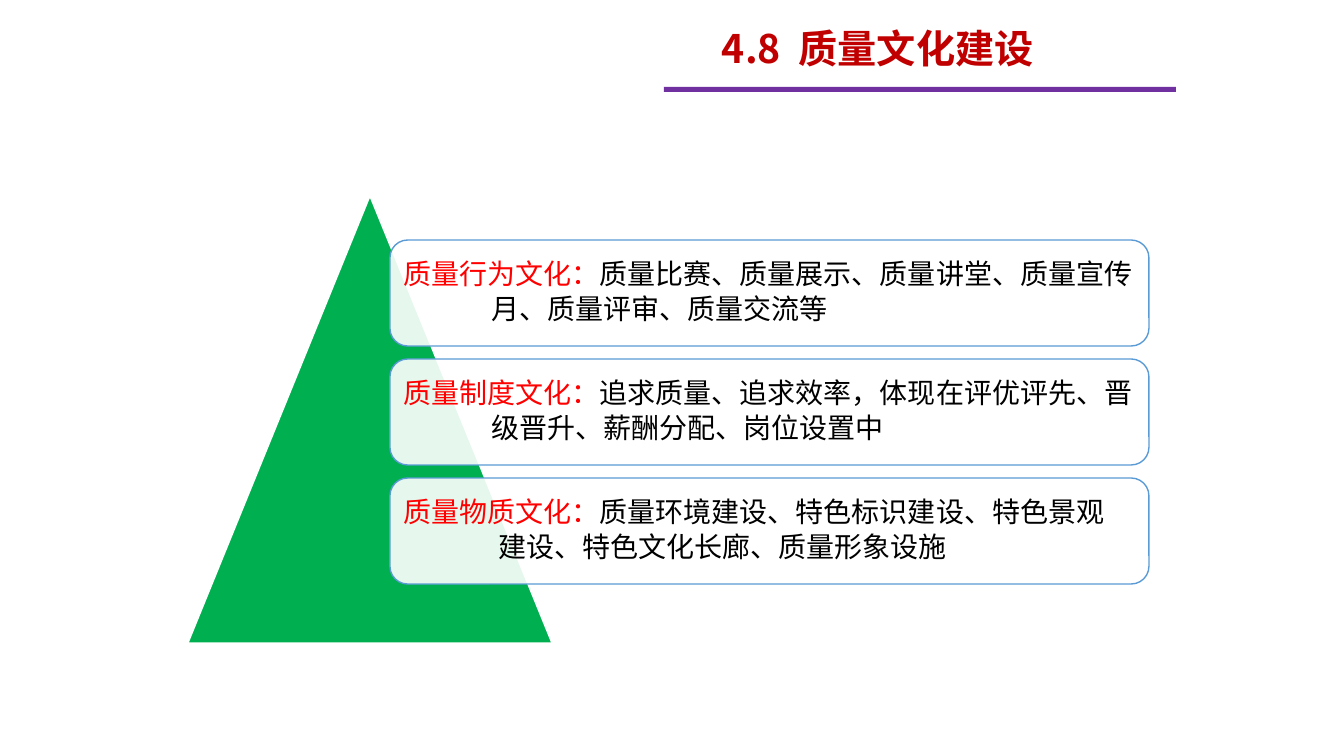
from pptx import Presentation
from pptx.dml.color import RGBColor
from pptx.enum.shapes import MSO_SHAPE as Kind
from pptx.enum.text import MSO_ANCHOR as Anchor, MSO_AUTO_SIZE as Fit, PP_ALIGN as Align
from pptx.oxml.ns import qn
from pptx.util import Pt
from lxml import etree

TITLE = "4.8  质量文化建设"
# heading, first line, second line, indent of the second line in px
CARDS = [
    ("质量行为文化：", "质量比赛、质量展示、质量讲堂、质量宣传",
     "月、质量评审、质量交流等", 88),
    ("质量制度文化：", "追求质量、追求效率，体现在评优评先、晋",
     "级晋升、薪酬分配、岗位设置中", 88),
    ("质量物质文化：", "质量环境建设、特色标识建设、特色景观",
     "建设、特色文化长廊、质量形象设施", 95),
]
COLORS = {"title": "C00000", "bar": "7030A0", "peak": "00B050", "white": "FFFFFF",
          "edge": "5B9BD5", "head": "FF0000", "text": "000000"}
FONT = "Noto Sans CJK SC"
SCALE = 914400 / 100.8


def px(n):
    return round(n * SCALE)


def rgb(name):
    return RGBColor.from_string(COLORS[name])


def write(par, text, size=20, color="text", bold=False):
    run = par.add_run()
    run.text = text
    font = run.font
    font.name, font.size, font.bold = FONT, Pt(size), bold
    font.color.rgb = rgb(color)
    east = etree.SubElement(run._r.get_or_add_rPr(), qn("a:ea"))
    east.set("typeface", FONT)


def draw(kind, box, fill, line=None, alpha=None):
    shape = slide.shapes.add_shape(kind, *map(px, box))
    shape.shadow.inherit = False
    shape.fill.solid()
    shape.fill.fore_color.rgb = rgb(fill)
    if alpha:
        tint = shape.fill._xPr.find(qn("a:solidFill"))[0]
        etree.SubElement(tint, qn("a:alpha")).set("val", str(alpha * 1000))
    if line:
        shape.line.color.rgb = rgb(line)
        shape.line.width = Pt(1)
    else:
        shape.line.fill.background()
    return shape


def inset(frame, left, top, right, bottom):
    frame.margin_left, frame.margin_top = px(left), px(top)
    frame.margin_right, frame.margin_bottom = px(right), px(bottom)
    frame.vertical_anchor = Anchor.MIDDLE
    frame.word_wrap = True
    frame.auto_size = Fit.NONE


deck = Presentation()
deck.slide_width, deck.slide_height = px(1344), px(756)
slide = deck.slides.add_slide(deck.slide_layouts[5])

title = slide.shapes.title
title.left, title.top, title.width, title.height = map(px, (712, 21, 453, 50))
inset(title.text_frame, 10, 4, 10, 0)
par = title.text_frame.paragraphs[0]
par.alignment = Align.LEFT
write(par, TITLE, size=28, color="title", bold=True)

draw(Kind.RECTANGLE, (664, 87, 512, 5), "bar")
draw(Kind.ISOSCELES_TRIANGLE, (188, 196, 364, 447), "peak", line="white")

TOP, HIGH, GAP = 240, 106, 13
for i, (head, first, second, indent) in enumerate(CARDS):
    box = (390, TOP + i * (HIGH + GAP), 759, HIGH)
    card = draw(Kind.ROUNDED_RECTANGLE, box, "white", line="edge", alpha=90)
    frame = card.text_frame
    inset(frame, 8, 8, 8, 8)
    lead, rest = frame.paragraphs[0], frame.add_paragraph()
    for par in (lead, rest):
        par.alignment = Align.LEFT
        par.line_spacing = 0.9
        par.space_after = Pt(3)
    write(lead, head, color="head")
    write(lead, first)
    props = rest._p.get_or_add_pPr()
    props.set("marL", str(px(indent)))
    props.set("indent", "0")
    write(rest, second)

deck.save("out.pptx")
